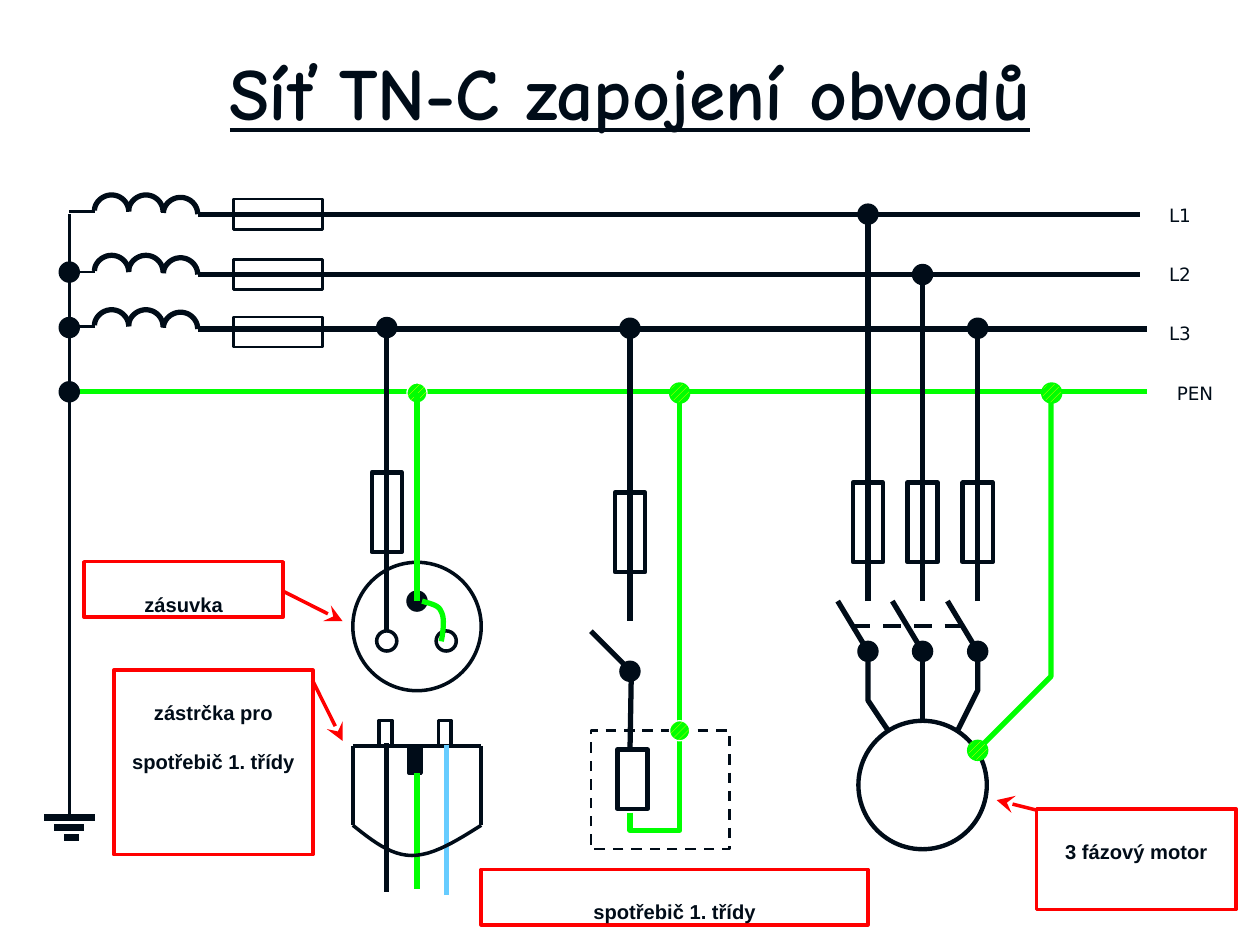
from dataclasses import dataclass

from lxml.etree import SubElement
from pptx import Presentation
from pptx.dml.color import RGBColor
from pptx.enum.dml import MSO_LINE, MSO_PATTERN
from pptx.enum.shapes import MSO_CONNECTOR, MSO_SHAPE
from pptx.enum.text import MSO_ANCHOR, PP_ALIGN
from pptx.oxml.ns import qn
from pptx.util import Pt


@dataclass(frozen=True)
class Theme:
    ink: str = "000C18"
    pen: str = "00FF00"
    stripe: str = "FFFF00"
    blue: str = "66CCFF"
    red: str = "FF0000"
    white: str = "FFFFFF"
    title: tuple = ("Comic Neue", 42)
    label: tuple = ("DejaVu Sans", 10.5)
    callout: tuple = ("Arial", 11.5)
    thin: float = 1.5
    medium: float = 2
    fuse: float = 2.5
    wire: float = 3
    earth: float = 4


T = Theme()

# Content: all coordinates in points
TITLE = "Síť TN-C zapojení obvodů"
EARTH_X, PEN_Y, DOT, FUSE = 39.6, 223.9, 11.5, (17.2, 45.4)
PHASES = [("L1", 122.4, 651.6, 122.4, 116.6), ("L2", 156.9, 651.6, 156.9, 150.5),
          ("L3", 188, 655.2, 189.7, 184.4)]  # name, wire y, wire end, fuse y, label y
COIL_X = (54, 73.6, 93.4)
COIL_SPAN = 19.6
SOCKET_X, SOCKET_PEN_X, SOCKET_N_X = 221, 238.3, 255
LOAD_X, LOAD_PEN_X = 360, 388.4
MOTOR_X = (496, 527.2, 558.7)
SWITCH_TOP, SWITCH_PIVOT = 343.5, 372.2

EARTH_BARS = [(467.3, 14.4), (473, 8.7), (478.8, 4.4)]  # y, half width
FUSES = [(LOAD_X, 304.2)] + [(x, 298.5) for x in MOTOR_X]  # centres
CIRCLES = [(238.3, 358, 73.4, T.medium), (SOCKET_X, 366.3, DOT, T.medium),
           (SOCKET_N_X, 366.3, DOT, T.medium), (527.2, 448.6, 73.4, T.fuse)]
PLUG = [  # outline, pins and cable cores
    (T.ink, T.medium, [(201.6, 426.2), (275, 426.2)]),
    (T.ink, T.medium, [(201.6, 426.2), (201.6, 471.6)]),
    (T.ink, T.medium, [(275, 426.2), (275, 471.6)]),
    (T.ink, T.medium, [(216.7, 426.2), (216.7, 411.8), (224, 411.8), (224, 426.2)]),
    (T.ink, T.medium, [(250.6, 426.2), (250.6, 411.8), (257.8, 411.8), (257.8, 426.2)]),
    (T.ink, T.wire, [(SOCKET_X, 424.8), (SOCKET_X, 509.8)]),
    (T.pen, T.wire, [(SOCKET_PEN_X, 442), (SOCKET_PEN_X, 508.3)]),
    (T.blue, T.wire, [(SOCKET_N_X, 425.5), (SOCKET_N_X, 511.2)]),
]
PLUG_BOTTOM = [(201.6, 471.6), (212.4, 480.2), (223.2, 488.9), (235.4, 488.9),
               (247.7, 488.9), (261.4, 480.2), (275, 471.6)]
SOCKET_BRIDGE = [(241.2, 343.5), (245.5, 344.9), (250.6, 345.6), (252, 349.2),
                 (254.2, 352.8), (253.4, 360), (252.2, 366.5)]
LOAD = [
    (T.ink, T.wire, [(360, 428.4), (360.7, 388.8)]),
    (T.pen, T.wire, [(360, 464.4), (360, 474.5), (LOAD_PEN_X, 474.5), (LOAD_PEN_X, 224.6)]),
    (T.ink, T.wire, [(360, 383), (337.7, 360.7)]),
    (T.ink, T.wire, [(LOAD_X, 190.8), (LOAD_X, 355)]),
]
MOTOR = [
    (T.ink, T.wire, [(527.2, 378), (527.2, 411.8)]),
    (T.ink, T.wire, [(496, 378), (496, 400.3), (507.6, 417.6)]),
    (T.ink, T.wire, [(558.7, 372.2), (558.7, 394.6), (547.2, 417.6)]),
    (T.pen, T.wire, [(600.5, 218.9), (600.5, 386.6), (558.7, 428.4)]),
]
SOCKET = [
    (T.ink, T.wire, [(SOCKET_X, 190.8), (SOCKET_X, 360.7)]),
    (T.pen, T.wire, [(SOCKET_PEN_X, 224.6), (SOCKET_PEN_X, 343.5)]),
]
DARK_DOTS = [(EARTH_X, 155.5), (EARTH_X, 187.2), (EARTH_X, PEN_Y),
             (SOCKET_X, 187.2), (SOCKET_PEN_X, 343.5), (LOAD_X, 187.6), (360, 383.6),
             (496, 122.4), (527.2, 156.9), (558.7, 187.6)]
DARK_DOTS += [(x, SWITCH_PIVOT) for x in MOTOR_X]
PEN_DOTS = [(SOCKET_PEN_X, 224.6, T.white), (LOAD_PEN_X, 224.6, T.pen),
            (LOAD_PEN_X, 417.6, T.white), (601, 224.6, T.pen), (558.7, 428.8, T.pen)]
CALLOUTS = [  # text, box, arrow
    ("zásuvka", (48, 321, 113.8, 31.7), [(161.5, 337.7), (195.8, 355)]),
    ("zástrčka pro spotřebič 1. třídy", (65, 383, 113.8, 105.3), [(178.6, 388.8), (195.8, 423.4)]),
    ("spotřebič 1. třídy", (275, 496.8, 221, 31.7), None),
    ("3 fázový motor", (592.4, 462.2, 113.8, 57.6), [(592.6, 463), (569.5, 457.2)]),
]

deck = Presentation()
deck.slide_width, deck.slide_height = Pt(720), Pt(540)
slide = deck.slides.add_slide(deck.slide_layouts[5])
shapes = slide.shapes


def rgb(color):
    return RGBColor.from_string(color)


def stroke(part, color, width, dash=None):
    part.line.color.rgb = rgb(color)
    part.line.width = Pt(width)
    if dash:
        part.line.dash_style = dash


def wire(points, color=T.ink, width=T.wire, dash=None, arrow=False):
    points = [(Pt(x), Pt(y)) for x, y in points]
    if len(points) == 2:
        part = shapes.add_connector(MSO_CONNECTOR.STRAIGHT, *points[0], *points[1])
    else:
        builder = shapes.build_freeform(*points[0], scale=1.0)
        builder.add_line_segments(points[1:], close=False)
        part = builder.convert_to_shape()
        part.fill.background()
        part.shadow.inherit = False
    stroke(part, color, width, dash)
    if len(points) == 2:
        properties = part._element.spPr
        if arrow:
            SubElement(properties.find(qn("a:ln")), qn("a:tailEnd"),
                       type="stealth", w="lg", len="lg")
        SubElement(properties, qn("a:effectLst"))


def curve(points, steps=12):
    """Trace chained cubic Bézier segments."""
    traced = [points[0]]
    for i in range(0, len(points) - 1, 3):
        for step in range(1, steps + 1):
            t = step / steps
            weights = ((1 - t) ** 3, 3 * t * (1 - t) ** 2, 3 * t * t * (1 - t), t ** 3)
            traced.append(tuple(sum(w * p[axis] for w, p in zip(weights, points[i:i + 4]))
                                for axis in (0, 1)))
    return traced


def outline(kind, x, y, w, h, color=T.ink, width=T.thin, dash=None, fill=None):
    part = shapes.add_shape(kind, Pt(x), Pt(y), Pt(w), Pt(h))
    part.shadow.inherit = False
    if fill:
        part.fill.solid()
        part.fill.fore_color.rgb = rgb(fill)
    else:
        part.fill.background()
    stroke(part, color, width, dash)
    return part


def centred(kind, x, y, w, h, **style):
    return outline(kind, x - w / 2, y - h / 2, w, h, **style)


def write(frame, text, font, bold=False, underline=None, spacing=None):
    paragraph = frame.paragraphs[0]
    paragraph.alignment = PP_ALIGN.CENTER
    if spacing:
        paragraph.line_spacing = spacing
    run = paragraph.add_run()
    run.text = text
    run.font.name, run.font.size = font[0], Pt(font[1])
    run.font.bold, run.font.underline = bold, underline
    run.font.color.rgb = rgb(T.ink)


def inset(frame, x, y):
    frame.word_wrap = True
    frame.margin_left = frame.margin_right = Pt(x)
    frame.margin_top = frame.margin_bottom = Pt(y)


def label(text, x, y, w):
    frame = shapes.add_textbox(Pt(x), Pt(y - 10.8), Pt(w), Pt(21.6)).text_frame
    inset(frame, 0, 0)
    frame.vertical_anchor = MSO_ANCHOR.MIDDLE
    write(frame, text, T.label, spacing=2.0)


# Title
heading = shapes.title
heading.left, heading.top, heading.width, heading.height = Pt(36), Pt(21.6), Pt(648), Pt(61.2)
heading.text_frame.vertical_anchor = MSO_ANCHOR.MIDDLE
write(heading.text_frame, TITLE, T.title, bold=True, underline=True)

# Supply: phases with windings and fuses, PEN, earthing
for name, y, end, fuse_y, label_y in PHASES:
    wire([(113, y), (end, y)])
    wire([(54, y - 1.4), (EARTH_X, y - 1.4)], width=T.thin)
    for x, foot in zip(COIL_X, (y - 1.4, y - 1.4, y)):
        middle, right, top = x + COIL_SPAN / 2, x + COIL_SPAN, foot - 9.6
        wire(curve([(right, foot), (right, foot - 5.3), (middle + 5.3, top), (middle, top),
                    (middle - 5.3, top), (x, foot - 5.3), (x, foot - 0.7)]))
    centred(MSO_SHAPE.RECTANGLE, 158.8, fuse_y, 51.1, 17.2)
    label(name, 660.2, label_y, 28.1)
wire([(45.4, PEN_Y), (655.2, PEN_Y)], T.pen)
label("PEN", 660.2, 218.2, 45.4)
wire([(EARTH_X, 122.4), (EARTH_X, 467.3)], width=T.thin)
for y, half in EARTH_BARS:
    wire([(EARTH_X - half + (y > 478) * 1.4, y), (EARTH_X + half + (y > 478) * 1.4, y)],
         width=T.earth)

# Fuses, socket, motor and load outlines
for x, y in FUSES:
    centred(MSO_SHAPE.RECTANGLE, x, y, *FUSE, width=T.fuse)
centred(MSO_SHAPE.RECTANGLE, SOCKET_X, 292.7, *FUSE, width=T.fuse)
for x, y, size, width in CIRCLES:
    centred(MSO_SHAPE.OVAL, x, y, size, size, width=width)
outline(MSO_SHAPE.RECTANGLE, 352.8, 428.4, 17.3, 33.8, width=T.fuse)
outline(MSO_SHAPE.RECTANGLE, 337.7, 417.6, 79.2, 67.7, dash=MSO_LINE.DASH)
outline(MSO_SHAPE.RECTANGLE, 233.6, 427, 7.2, 14.7, width=T.medium, fill=T.ink)

# Branch wiring and three-pole switch
for color, width, points in PLUG + LOAD + MOTOR:
    wire(points, color, width)
wire(curve(PLUG_BOTTOM), width=T.medium)
for x, (_, phase_y, *_) in zip(MOTOR_X, PHASES):
    wire([(x, SWITCH_TOP), (x, phase_y)])
    wire([(x, SWITCH_PIVOT), (x - 17.3, SWITCH_TOP)])
wire([(487.4, 357.8), (550, 357.8)], width=T.fuse, dash=MSO_LINE.DASH)

# Junctions
for x, y in DARK_DOTS:
    centred(MSO_SHAPE.OVAL, x, y, DOT, DOT, width=0.75, fill=T.ink)
for x, y, edge in PEN_DOTS:
    dot = centred(MSO_SHAPE.OVAL, x, y, DOT, DOT, color=edge, width=0.75)
    dot.fill.patterned()
    dot.fill.pattern = MSO_PATTERN.WIDE_UPWARD_DIAGONAL
    dot.fill.fore_color.rgb, dot.fill.back_color.rgb = rgb(T.stripe), rgb(T.pen)

# Socket wiring runs over its junctions
for color, width, points in SOCKET:
    wire(points, color, width)
wire(curve(SOCKET_BRIDGE), T.pen)

# Callouts
for text, box, arrow in CALLOUTS:
    callout = outline(MSO_SHAPE.RECTANGLE, *box, color=T.red, width=T.medium)
    inset(callout.text_frame, 2.9, 3.6)
    callout.text_frame.vertical_anchor = MSO_ANCHOR.TOP
    write(callout.text_frame, text, T.callout, bold=True, spacing=2.0)
    if arrow:
        wire(arrow, T.red, T.medium, arrow=True)

deck.save("out.pptx")
